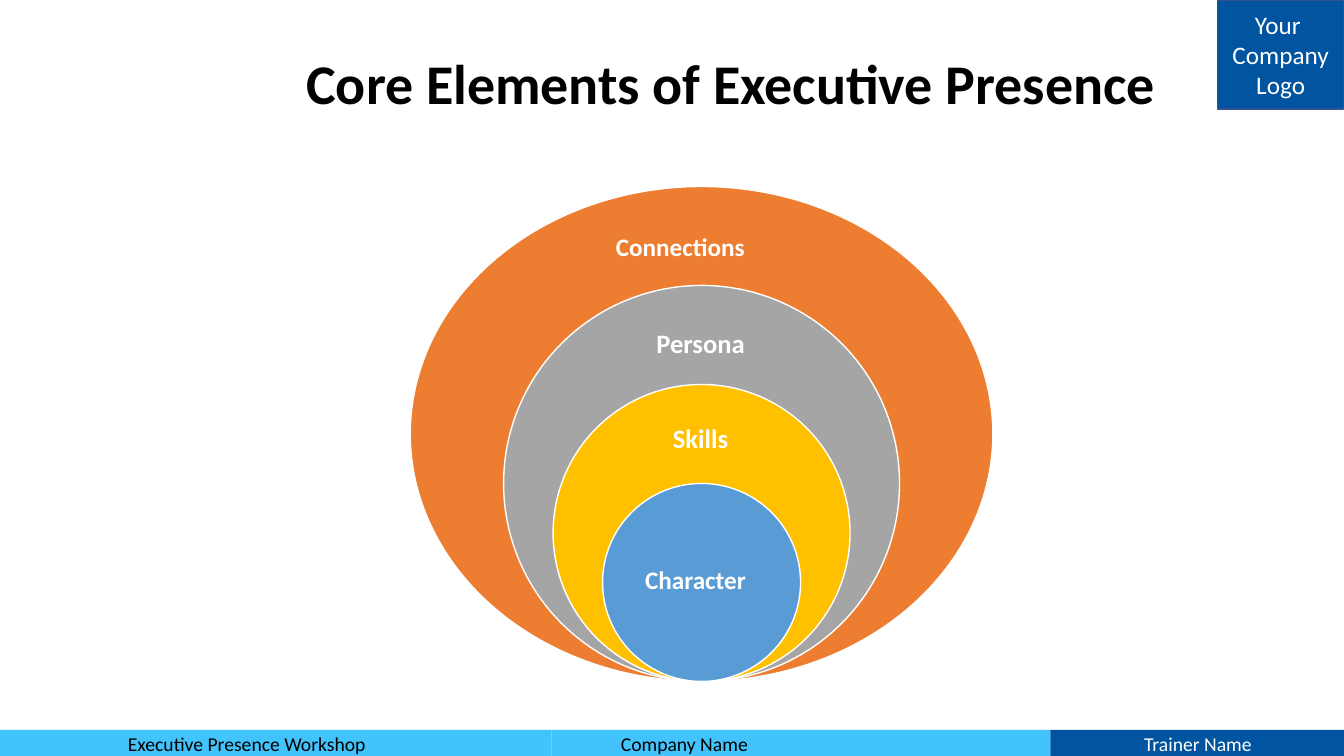
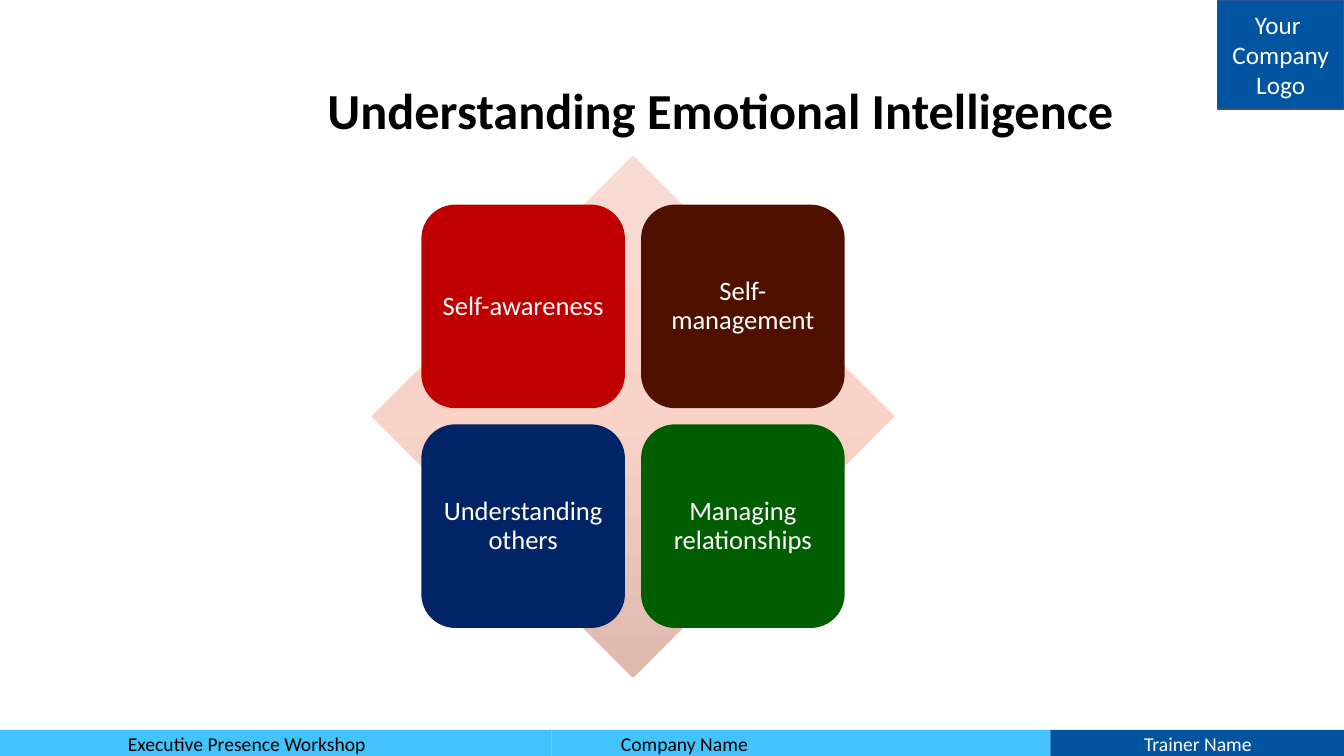
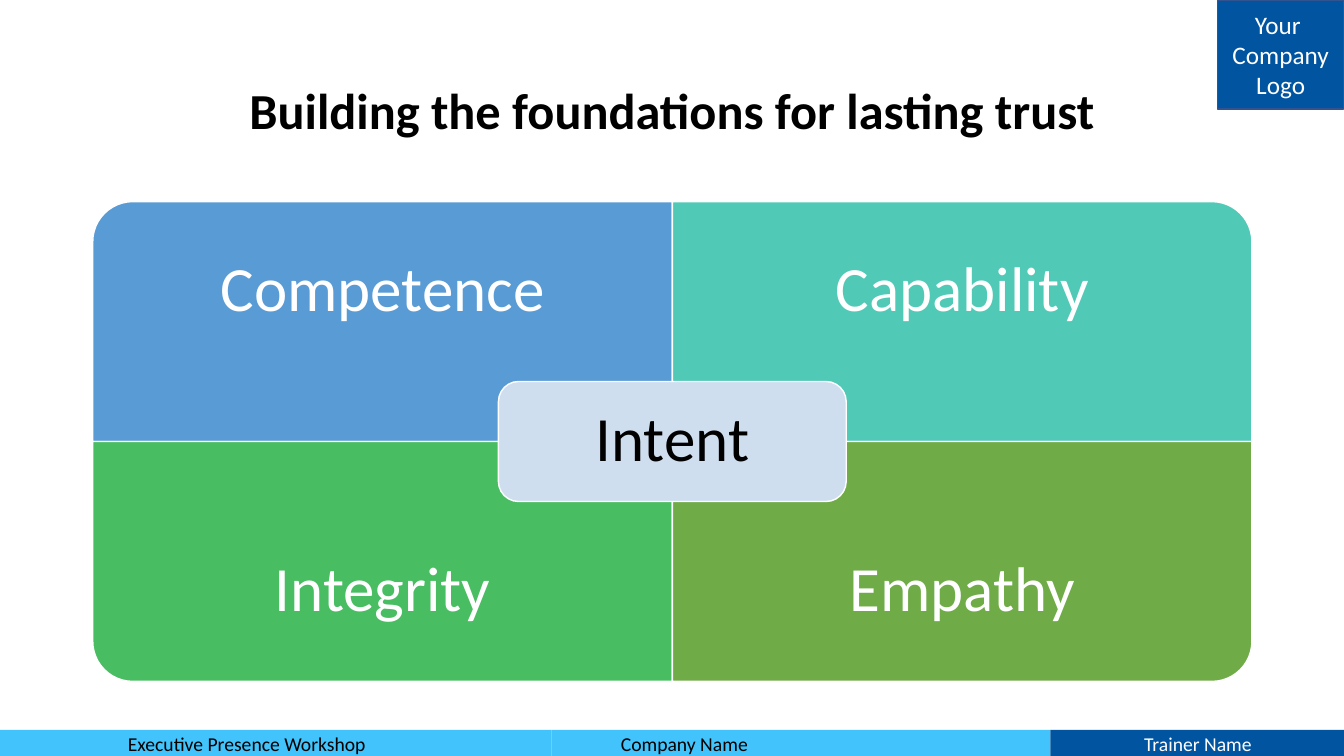
from dataclasses import dataclass

from lxml.etree import SubElement
from pptx import Presentation
from pptx.dml.color import RGBColor
from pptx.enum.shapes import MSO_SHAPE as Preset
from pptx.enum.text import MSO_ANCHOR as Anchor, MSO_AUTO_SIZE as AutoSize, PP_ALIGN as Align
from pptx.oxml.ns import qn
from pptx.util import Emu, Inches, Pt


@dataclass(frozen=True)
class Theme:
    font: str = "Calibri"
    white: str = "FFFFFF"
    black: str = "000000"
    sky: str = "42C3FB"
    navy: str = "01549F"
    navy_edge: str = "31538F"
    glow: tuple = ((0, "F8DCD4"), (50, "F9D3C8"), (100, "DFB8AD"))
    intent: str = "CFDEEF"
    footer_size: int = 14
    logo_size: int = 18
    card_size: int = 19
    trust_size: int = 45
    spacing: float = 0.9
    corner: float = 0.167


THEME = Theme()
WIDTH, HEIGHT = 13.33, 7.5

FOOTER_TOP, FOOTER_HEIGHT = 7.24, 0.28
FOOTER = [
    ("Executive Presence Workshop", 5.47, THEME.sky, THEME.black, 1.17),
    ("Company Name", 4.95, THEME.sky, THEME.black, 0.59),
    ("Trainer Name", 2.93, THEME.navy, THEME.white, None),
]
LOGO_LINES = ["Your ", "Company", "Logo"]
LOGO_WIDTH, LOGO_HEIGHT = 1.25, 1.08

TITLES = {
    "presence": ("Core Elements of Executive Presence", 40, (1.5, 0.4, 11.5, 0.92)),
    "emotion": ("Understanding Emotional Intelligence", 36, (1.89, 0.4, 10.52, 1.45)),
    "trust": ("Building the foundations for lasting trust", 36, (0.92, 0.4, 11.5, 1.45)),
}

LAYERS_CENTER, LAYERS_BOTTOM, LAYERS_HEIGHT, OUTER_WIDTH = 6.96, 6.76, 4.91, 5.78
LAYERS = [
    ("Connections", "ED7D31", 18, (6.75, 2.46)),
    ("Persona", "A5A5A5", 19, (6.95, 3.42)),
    ("Skills", "FFC000", 19, (6.95, 4.36)),
    ("Character", "599BD5", 18, (6.9, 5.77)),
]
LAYER_LABEL = (2.04, 0.74)

EMOTION_CENTER, DIAMOND, CARD, CARD_GAP = (6.28, 4.13), 5.18, 2.02, 0.16
SKILL_CARDS = [
    ("Self-awareness", "C00000"),
    ("Self-management", "501000"),
    ("Understanding others", "002465"),
    ("Managing relationships", "005E00"),
]

BOARD_LEFT, BOARD_TOP, QUAD_WIDTH, QUAD_HEIGHT = 0.92, 2, 5.75, 2.38
QUADRANTS = [
    ("Competence", "599BD5", 270),
    ("Capability", "50C9B6", 0),
    ("Integrity", "48BD62", 180),
    ("Empathy", "6FAB46", 90),
]


def around(center, width, height):
    return center[0] - width / 2, center[1] - height / 2, width, height


def write(shape, lines, size, color, inset=(0.1, 0.05), bold=False,
          spacing=None, indent=None):
    frame = shape.text_frame
    frame.auto_size = AutoSize.NONE
    frame.word_wrap = True
    frame.vertical_anchor = Anchor.MIDDLE
    frame.margin_left = frame.margin_right = Inches(inset[0])
    frame.margin_top = frame.margin_bottom = Inches(inset[1])
    for number, line in enumerate(lines):
        paragraph = frame.add_paragraph() if number else frame.paragraphs[0]
        paragraph.alignment = Align.CENTER if indent is None else Align.LEFT
        if indent is not None:
            paragraph._p.get_or_add_pPr().set("marL", str(Inches(indent)))
        if spacing:
            paragraph.line_spacing = spacing
        run = paragraph.add_run()
        run.text = line
        run.font.name = THEME.font
        run.font.size = Pt(size)
        run.font.bold = bold
        run.font.color.rgb = RGBColor.from_string(color)


def draw(slide, preset, box, fill, edge=None, corner=None):
    shape = slide.shapes.add_shape(preset, *map(Inches, box))
    shape.shadow.inherit = False
    shape.fill.solid()
    shape.fill.fore_color.rgb = RGBColor.from_string(fill)
    if edge:
        shape.line.color.rgb = RGBColor.from_string(edge)
        shape.line.width = Pt(1)
    else:
        shape.line.fill.background()
    if corner:
        shape.adjustments[0] = corner
    return shape


def label(slide, box, text, size, inset, bold=False):
    caption = slide.shapes.add_textbox(*map(Inches, box))
    write(caption, [text], size, THEME.white, (inset, inset), bold, THEME.spacing)


def shade(shape, stops):
    shape.fill.gradient()
    shape.fill.gradient_angle = 270
    stop_list = shape.element.spPr.find(qn("a:gradFill")).find(qn("a:gsLst"))
    for old_stop in list(stop_list):
        stop_list.remove(old_stop)
    for position, color in stops:
        stop = SubElement(stop_list, qn("a:gs"), pos=str(position * 1000))
        SubElement(stop, qn("a:srgbClr"), val=color)


def titled_slide(deck, layout, key):
    text, size, box = TITLES[key]
    slide = deck.slides.add_slide(layout)
    title = slide.shapes.title
    title.left, title.top, title.width, title.height = map(Inches, box)
    write(title, [text], size, THEME.black, bold=True, spacing=THEME.spacing)
    return slide


def furnish_layout(layout, slide):
    for holder in list(layout.placeholders):
        if holder.placeholder_format.idx:
            holder.element.getparent().remove(holder.element)
    fixtures = []
    left = 0
    for text, width, fill, color, indent in FOOTER:
        band = draw(slide, Preset.RECTANGLE, (left, FOOTER_TOP, width, FOOTER_HEIGHT), fill)
        write(band, [text], THEME.footer_size, color, (0.1, 0.04), indent=indent)
        fixtures.append(band)
        left += width
    logo = draw(slide, Preset.RECTANGLE, (WIDTH - LOGO_WIDTH, 0, LOGO_WIDTH, LOGO_HEIGHT),
                THEME.navy, THEME.navy_edge)
    write(logo, LOGO_LINES, THEME.logo_size, THEME.white)
    for fixture in fixtures + [logo]:
        layout.shapes.element.append(fixture.element)


def draw_layers(slide):
    for depth, (name, fill, size, center) in enumerate(LAYERS):
        height = LAYERS_HEIGHT * (1 - depth / 5)
        width = height if depth else OUTER_WIDTH
        middle = (LAYERS_CENTER, LAYERS_BOTTOM - height / 2)
        draw(slide, Preset.OVAL, around(middle, width, height), fill, THEME.white)
        label(slide, around(center, *LAYER_LABEL), name, size, 0.14, bold=True)


def draw_skill_cards(slide):
    diamond = draw(slide, Preset.DIAMOND, around(EMOTION_CENTER, DIAMOND, DIAMOND), THEME.white)
    shade(diamond, THEME.glow)
    pitch = CARD + CARD_GAP
    for number, (name, fill) in enumerate(SKILL_CARDS):
        row, column = divmod(number, 2)
        center = (EMOTION_CENTER[0] + (column - 0.5) * pitch,
                  EMOTION_CENTER[1] + (row - 0.5) * pitch)
        card = draw(slide, Preset.ROUNDED_RECTANGLE, around(center, CARD, CARD), fill,
                    corner=THEME.corner)
        write(card, [name], THEME.card_size, THEME.white, (0.08, 0.08), spacing=THEME.spacing)


def draw_quadrants(slide):
    label_height = QUAD_HEIGHT * 0.75
    for number, (name, fill, turn) in enumerate(QUADRANTS):
        row, column = divmod(number, 2)
        left = BOARD_LEFT + column * QUAD_WIDTH
        top = BOARD_TOP + row * QUAD_HEIGHT
        center = (left + QUAD_WIDTH / 2, top + QUAD_HEIGHT / 2)
        size = (QUAD_HEIGHT, QUAD_WIDTH) if turn % 180 else (QUAD_WIDTH, QUAD_HEIGHT)
        quadrant = draw(slide, Preset.ROUND_1_RECTANGLE, around(center, *size), fill,
                        THEME.white, THEME.corner)
        quadrant.rotation = turn
        label_top = top + row * (QUAD_HEIGHT - label_height)
        label(slide, (left, label_top, QUAD_WIDTH, label_height), name, THEME.trust_size, 0.35)
    middle = (BOARD_LEFT + QUAD_WIDTH, BOARD_TOP + QUAD_HEIGHT)
    intent = draw(slide, Preset.ROUNDED_RECTANGLE,
                  around(middle, QUAD_WIDTH * 0.6, QUAD_HEIGHT / 2),
                  THEME.intent, THEME.white, THEME.corner)
    write(intent, ["Intent"], THEME.trust_size, THEME.black, (0.19, 0.19), spacing=THEME.spacing)


def main():
    deck = Presentation()
    deck.slide_width, deck.slide_height = Emu(12192000), Inches(HEIGHT)
    layout = deck.slide_layouts[5]
    presence, emotion, trust = (titled_slide(deck, layout, key) for key in TITLES)
    furnish_layout(layout, presence)
    draw_layers(presence)
    draw_skill_cards(emotion)
    draw_quadrants(trust)
    deck.save("out.pptx")


if __name__ == "__main__":
    main()
